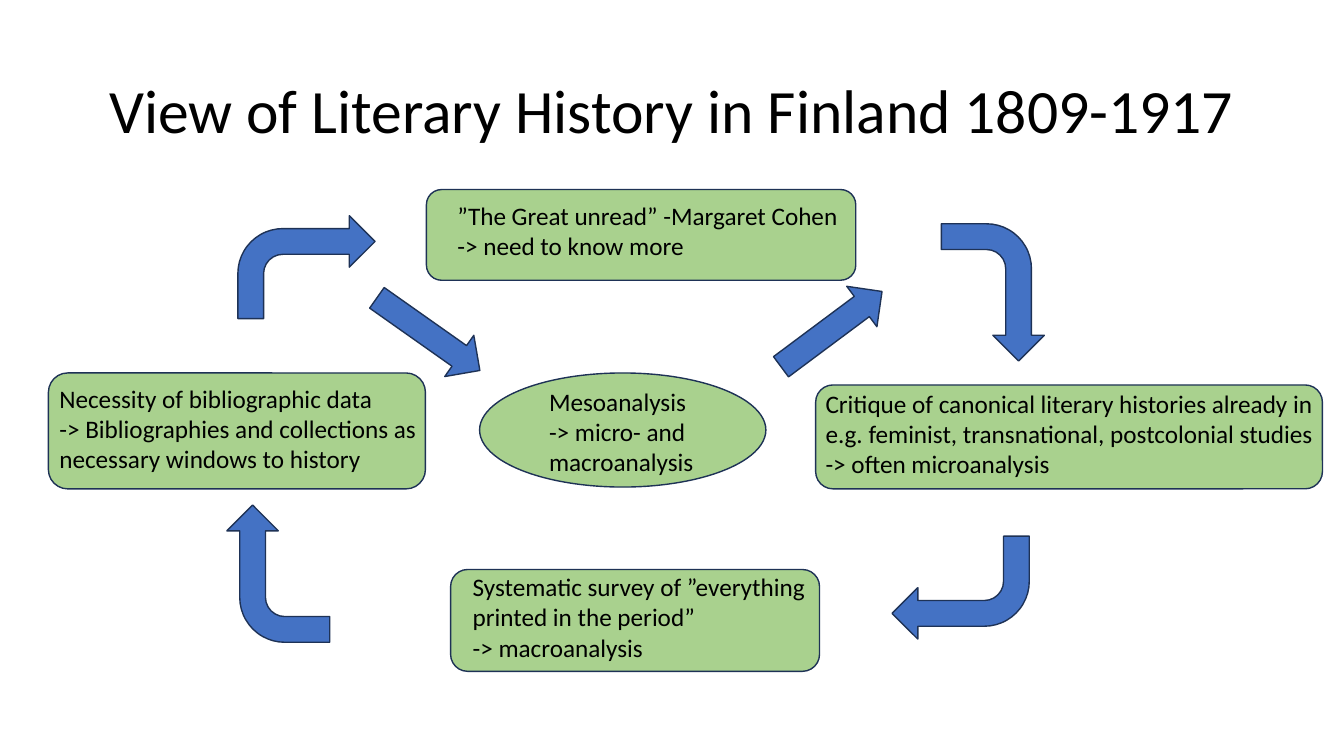
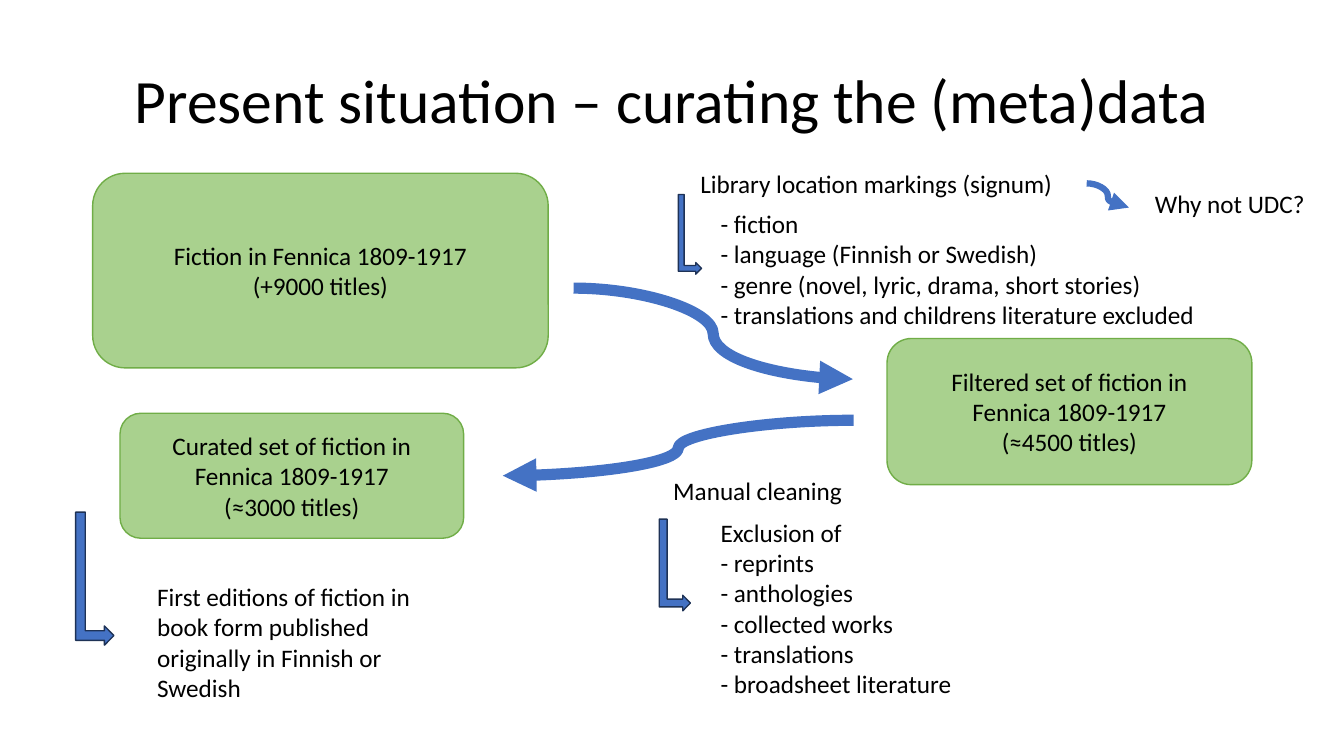
from typing import NamedTuple

from lxml import etree
from pptx import Presentation
from pptx.dml.color import RGBColor
from pptx.enum import shapes, text
from pptx.oxml import ns
from pptx.util import Pt

FONT = "Calibri"
BLACK, GREEN, LEAF, BLUE, NAVY = "000000", "A9D18E", "70AD47", "4472C4", "1E3256"
LINE_HEIGHT, INSETS = 21.9, 7.2
KIND = shapes.MSO_SHAPE


class Box(NamedTuple):
    """A rectangle in points."""
    left: float
    top: float
    width: float
    height: float

    def inside(self, x, y, width, height):
        """Return a box placed relative to this one."""
        return Box(self.left + x, self.top + y, width, height)

    def lengths(self):
        """Return the four sides as slide lengths."""
        return [Pt(value) for value in self]


def colour(hex_code):
    """Turn a hex string into a colour."""
    return RGBColor.from_string(hex_code)


def write(frame, lines, size=18, align=None):
    """Fill a text frame with one paragraph for each line."""
    frame.word_wrap = True
    for index, line in enumerate(lines):
        para = frame.add_paragraph() if index else frame.paragraphs[0]
        para.text = line
        para.alignment = align
        para.font.size = Pt(size)
        para.font.name = FONT
        para.font.color.rgb = colour(BLACK)


def add_page(deck, title, top):
    """Add a slide with a centred title."""
    page = deck.slides.add_slide(deck.slide_layouts[5])
    holder = page.shapes.title
    holder.left, holder.top, holder.width, holder.height = Box(66, top, 828, 104.4).lengths()
    write(holder.text_frame, [title], 44, text.PP_ALIGN.CENTER)
    holder.text_frame.vertical_anchor = text.MSO_ANCHOR.MIDDLE
    holder.text_frame.auto_size = text.MSO_AUTO_SIZE.NONE
    holder.text_frame.paragraphs[0].line_spacing = 0.9
    return page


def add_figure(page, kind, box, fill, outline, rotation=0):
    """Draw a filled and outlined preset shape."""
    figure = page.shapes.add_shape(kind, *box.lengths())
    figure.shadow.inherit = False
    figure.fill.solid()
    figure.fill.fore_color.rgb = colour(fill)
    figure.line.color.rgb = colour(outline)
    figure.line.width = Pt(1)
    figure.rotation = rotation
    return figure


def add_label(page, box, lines):
    """Place left-aligned text that grows downwards."""
    label = page.shapes.add_textbox(*box.lengths())
    write(label.text_frame, lines)
    label.text_frame.auto_size = text.MSO_AUTO_SIZE.SHAPE_TO_FIT_TEXT


def add_flow(page, start, end, width):
    """Draw a curved arrow between two points."""
    flow = page.shapes.add_connector(
        shapes.MSO_CONNECTOR.CURVE, *(Pt(value) for value in (*start, *end)))
    flow.line.color.rgb = colour(BLUE)
    flow.line.width = Pt(width)
    etree.SubElement(flow.line._get_or_add_ln(), ns.qn("a:tailEnd"), type="triangle")
    etree.SubElement(flow._element.spPr, ns.qn("a:effectLst"))


def add_cycle(page, box):
    """Draw the ring of views around the central ellipse."""
    nodes = [
        (KIND.OVAL, (308, 131, 204.5, 81.5), (42.5, 6, 157),
         ["Mesoanalysis", "-> micro- and macroanalysis"]),
        (KIND.ROUNDED_RECTANGLE, (270, 0, 306.7, 64.8), (15, 4.3, 312),
         ["”The Great unread” -Margaret Cohen", "-> need to know more"]),
        (KIND.ROUNDED_RECTANGLE, (548, 139.6, 362, 74.2), (0, -1.4, 369.4),
         ["Critique of canonical literary histories already in e.g. feminist, "
          "transnational, postcolonial studies", "-> often microanalysis"]),
        (KIND.ROUNDED_RECTANGLE, (287.3, 271.4, 263.5, 72.7), (8.6, -2.2, 258.5),
         ["Systematic survey of ”everything printed in the period”", "-> macroanalysis"]),
        (KIND.ROUNDED_RECTANGLE, (0, 131, 269.3, 82.8), (0.7, 3.6, 273),
         ["Necessity of bibliographic data",
          "-> Bibliographies and collections as necessary windows to history"]),
    ]
    for kind, place, (x, y, width), lines in nodes:
        node = box.inside(*place)
        add_figure(page, kind, node, GREEN, NAVY)
        rows = 2 if "unread" in lines[0] else 3
        add_label(page, node.inside(x, y, width, rows * LINE_HEIGHT + INSETS), lines)

    arrows = [
        (KIND.BENT_ARROW, (625.6, 36.7, 98, 73.5), 90),
        (KIND.BENT_ARROW, (602.6, 247.6, 98, 73.5), 180),
        (KIND.BENT_ARROW, (115.2, 237.6, 98, 73.5), 270),
        (KIND.BENT_ARROW, (135.3, 18.7, 98, 73.5), 0),
        (KIND.UP_ARROW, (253.4, 58.3, 36, 90), 125.2),
        (KIND.UP_ARROW, (541.4, 54.7, 36, 90), 53.3),
    ]
    for kind, place, rotation in arrows:
        add_figure(page, kind, box.inside(*place), BLUE, NAVY, rotation)


def add_sets(page, box):
    """Draw the three data sets and the flows between them."""
    sets = [
        ((0, 0, 325.4, 139), ["Fiction in Fennica 1809-1917", "(+9000 titles)"]),
        ((567.4, 118, 260.6, 104.4),
         ["Filtered set of fiction in", "Fennica 1809-1917", "(≈4500 titles)"]),
        ((19.5, 171.4, 245.5, 89.3),
         ["Curated set of fiction in Fennica 1809-1917", "(≈3000 titles)"]),
    ]
    for place, lines in sets:
        figure = add_figure(page, KIND.ROUNDED_RECTANGLE, box.inside(*place), GREEN, LEAF)
        write(figure.text_frame, lines, align=text.PP_ALIGN.CENTER)
        figure.text_frame.vertical_anchor = text.MSO_ANCHOR.MIDDLE
    flows = [((343.5, 82), (543, 147), 8),
             ((543.6, 176.4), (293, 216), 8),
             ((710, 7.2), (740.2, 24.5), 4.5)]
    for start, end, width in flows:
        ends = [(box.left + x, box.top + y) for x, y in (start, end)]
        add_flow(page, *ends, width)


def add_note(page, box, lines, arrow, heading=None):
    """Place a note, its elbow arrow and an optional heading above."""
    add_label(page, box, lines)
    add_figure(page, KIND.BENT_UP_ARROW, box.inside(*arrow), BLUE, NAVY, 90)
    if heading:
        words, x, y = heading
        add_label(page, box.inside(x, y, 313, LINE_HEIGHT + INSETS), [words])


def main():
    """Build and save the deck."""
    deck = Presentation()
    deck.slide_width, deck.slide_height = Pt(960), Pt(540)

    history = add_page(deck, "View of Literary History in Finland 1809-1917", 28.8)
    add_cycle(history, Box(34.6, 135.4, 910, 344))

    curation = add_page(deck, "Present situation – curating the (meta)data", 21.6)
    add_sets(curation, Box(66.2, 123.8, 828, 260.7))
    add_note(curation, Box(507.6, 145.4, 374.4, 94.3),
             ["- fiction", "- language (Finnish or Swedish)",
              "- genre (novel, lyric, drama, short stories)",
              "- translations and childrens literature excluded"],
             (-43.2, 13.7, 56.9, 16.6),
             ("Library location markings (signum)", -14.4, -28.8))
    add_note(curation, Box(507.6, 365.8, 260, 138.2),
             ["Exclusion of", "- reprints", "- anthologies", "- collected works",
              "- translations", "- broadsheet literature"],
             (-58.3, 26.6, 65.5, 22.3),
             ("Manual cleaning", -33.8, -29.6))
    add_note(curation, Box(105.1, 411.8, 202.3, 94.3),
             ["First editions of fiction in book form published originally in "
              "Finnish or Swedish"],
             (-84.9, -12.2, 95, 27.4))
    add_label(curation, Box(817.9, 131, 129.6, 29.1), ["Why not UDC?"])
    deck.save("out.pptx")


if __name__ == "__main__":
    main()
